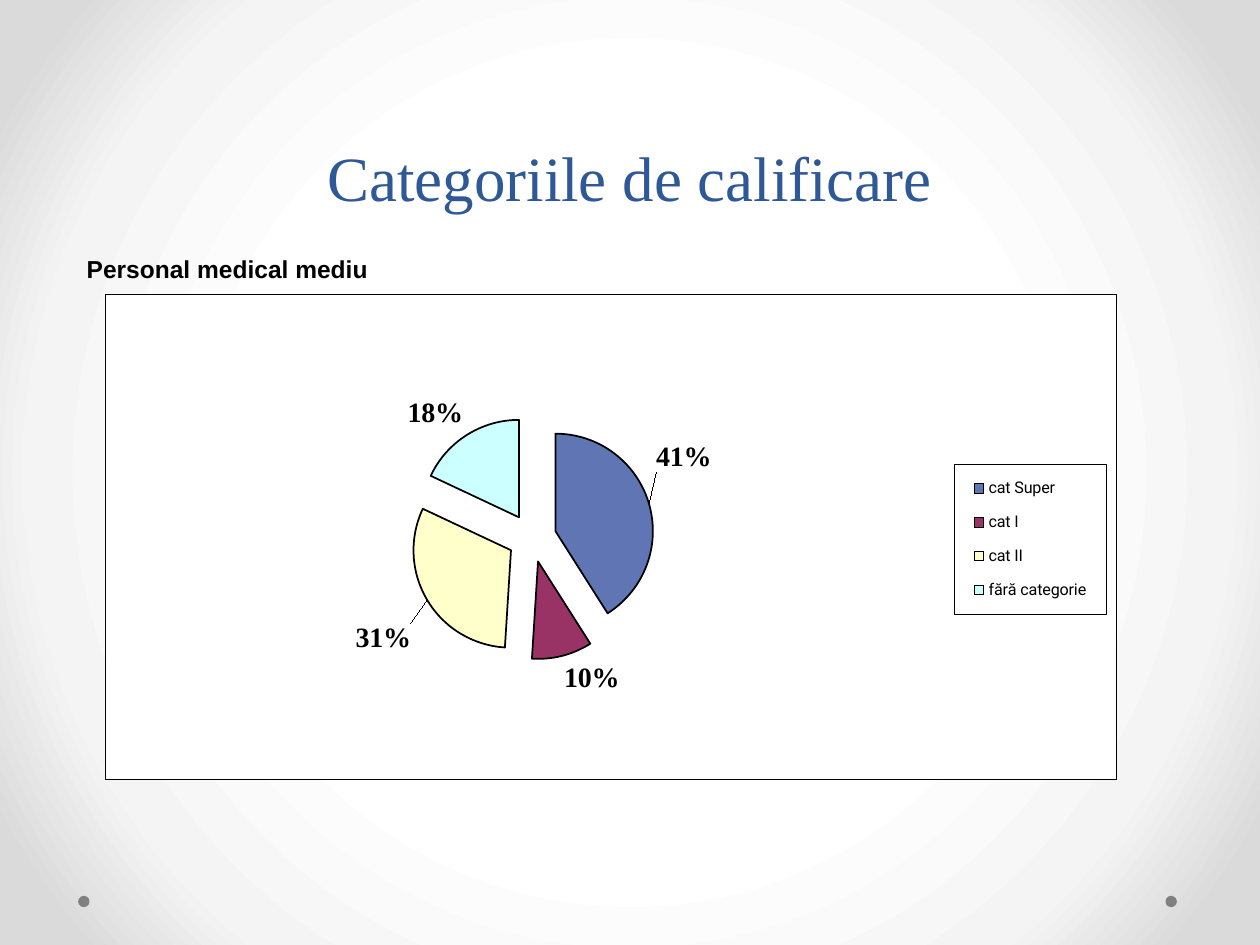
from pptx import Presentation
from pptx.chart.data import CategoryChartData
from pptx.dml.color import RGBColor
from pptx.enum.chart import XL_CHART_TYPE as ChartType
from pptx.enum.chart import XL_LABEL_POSITION as LabelPosition
from pptx.enum.chart import XL_LEGEND_POSITION as LegendPosition
from pptx.enum.shapes import MSO_SHAPE as Shape
from pptx.enum.text import MSO_ANCHOR as Anchor
from pptx.enum.text import PP_ALIGN as Align
from pptx.oxml import parse_xml
from pptx.oxml.ns import nsdecls, qn
from pptx.util import Inches, Pt

TITLE = "Categoriile de calificare"
SUBTITLE = "Personal medical mediu"
SLICES = [
    ("cat Super", 0.41, "6076B4"),
    ("cat I", 0.10, "993366"),
    ("cat II", 0.31, "FFFFCC"),
    ("fără categorie", 0.18, "CCFFFF"),
]
LABEL_SHIFTS = {0: (0, -0.06), 2: (-0.01, 0.04)}
COLORS = {"title": "2F5897", "ink": "000000", "paper": "FFFFFF", "dot": "808080"}
BACKDROP = [(0, "FFFFFF"), (50, "FFFFFF"), (76, "F4F4F4"), (92, "DADADA"), (100, "DADADA")]
DOT_LEFTS = [0.62, 9.25]


def style_font(font, name, size, color, bold=False):
    font.name = name
    font.size = Pt(size)
    font.bold = bold
    font.color.rgb = RGBColor.from_string(color)


def layout_xml(x, y, w=None, h=None, inner=False):
    parts = '<c:layoutTarget val="inner"/>' if inner else ""
    if w is not None:
        parts += '<c:xMode val="edge"/><c:yMode val="edge"/>'
    for key, value in zip("xywh", (x, y, w, h)):
        if value is not None:
            parts += f'<c:{key} val="{value}"/>'
    return parse_xml(
        f'<c:layout {nsdecls("c")}><c:manualLayout>{parts}</c:manualLayout></c:layout>'
    )


def framed_xml():
    return parse_xml(
        f'<c:spPr {nsdecls("c", "a")}>'
        f'<a:solidFill><a:srgbClr val="{COLORS["paper"]}"/></a:solidFill>'
        f'<a:ln w="{Pt(0.25)}"><a:solidFill><a:srgbClr val="{COLORS["ink"]}"/>'
        "</a:solidFill></a:ln></c:spPr>"
    )


def add_backdrop(page):
    stops = "".join(
        f'<a:gs pos="{pos * 1000}"><a:srgbClr val="{color}"/></a:gs>' for pos, color in BACKDROP
    )
    page.element.find(qn("p:cSld")).insert(0, parse_xml(
        f'<p:bg {nsdecls("p", "a")}><p:bgPr><a:gradFill><a:gsLst>{stops}</a:gsLst>'
        '<a:path path="circle"><a:fillToRect l="50000" t="50000" r="50000" b="50000"/>'
        "</a:path></a:gradFill><a:effectLst/></p:bgPr></p:bg>"
    ))


def add_dots(page):
    for left in DOT_LEFTS:
        dot = page.shapes.add_shape(
            Shape.OVAL, Inches(left), Inches(7.11), Inches(0.09), Inches(0.09)
        )
        dot.shadow.inherit = False
        dot.fill.solid()
        dot.fill.fore_color.rgb = RGBColor.from_string(COLORS["dot"])
        dot.line.fill.background()


def add_headings(page):
    title = page.shapes.title
    title.left, title.top, title.width, title.height = map(Inches, (0.5, 0, 9, 1.75))
    frame = title.text_frame
    frame.text = TITLE
    frame.vertical_anchor = Anchor.BOTTOM
    para = frame.paragraphs[0]
    para.alignment = Align.CENTER
    para.line_spacing = Pt(58)
    style_font(para.runs[0].font, "Times New Roman", 36, COLORS["title"])

    box = page.shapes.add_textbox(Inches(0.59), Inches(1.95), Inches(2.44), Inches(0.36))
    box.text_frame.text = SUBTITLE
    box.text_frame.vertical_anchor = Anchor.MIDDLE
    span = box.text_frame.paragraphs[0].runs[0]
    style_font(span.font, "Arial", 14, COLORS["ink"], True)


def add_pie(page):
    data = CategoryChartData(number_format="0%")
    data.categories = [name for name, _, _ in SLICES]
    data.add_series("Series 1", [value for _, value, _ in SLICES])
    chart = page.shapes.add_chart(
        ChartType.PIE, Inches(0.83), Inches(2.33), Inches(8.03), Inches(3.86), data
    ).chart
    chart.has_title = False
    style_font(chart.font, "Roboto", 10, COLORS["ink"])
    body = chart.element.find(qn("c:chart"))
    body.addnext(framed_xml())

    area = body.find(qn("c:plotArea"))
    for old in area.findall(qn("c:layout")):
        area.remove(old)
    area.insert(0, layout_xml(0.302, 0.21, 0.241, 0.585, inner=True))

    chart.has_legend = True
    legend = chart.legend
    legend.position = LegendPosition.RIGHT
    legend.include_in_layout = False
    style_font(legend.font, "Roboto", 9.2, COLORS["ink"])
    legend_xml = body.find(qn("c:legend"))
    for old in legend_xml.findall(qn("c:layout")):
        legend_xml.remove(old)
    legend_xml.find(qn("c:legendPos")).addnext(layout_xml(0.84, 0.35, 0.15, 0.31))
    legend_xml.find(qn("c:overlay")).addnext(framed_xml())

    plot = chart.plots[0]
    plot.vary_by_categories = True
    series = plot.series[0]
    series.format.line.color.rgb = RGBColor.from_string(COLORS["ink"])
    series.format.line.width = Pt(1)
    series_xml = area.find(".//" + qn("c:ser"))
    series_xml.find(qn("c:spPr")).addnext(
        parse_xml(f'<c:explosion {nsdecls("c")} val="25"/>')
    )

    labels = series.data_labels
    labels.show_value = True
    labels.number_format = "0%"
    labels.number_format_is_linked = False
    labels.position = LabelPosition.OUTSIDE_END
    style_font(labels.font, "Times New Roman", 16, COLORS["ink"], True)

    for index, (_, _, color) in enumerate(SLICES):
        point = series.points[index]
        point.format.fill.solid()
        point.format.fill.fore_color.rgb = RGBColor.from_string(color)
        point.format.line.color.rgb = RGBColor.from_string(COLORS["ink"])
        point.format.line.width = Pt(1)
        if index in LABEL_SHIFTS:
            label = point.data_label
            style_font(label.font, "Times New Roman", 16, COLORS["ink"], True)
            label.position = LabelPosition.OUTSIDE_END
            label_xml = series_xml.findall(".//" + qn("c:dLbl"))[-1]
            label_xml.find(qn("c:idx")).addnext(layout_xml(*LABEL_SHIFTS[index]))


def main():
    deck = Presentation()
    deck.slide_width, deck.slide_height = Inches(10), Inches(7.5)
    page = deck.slides.add_slide(deck.slide_layouts[5])
    add_backdrop(page)
    add_dots(page)
    add_headings(page)
    add_pie(page)
    deck.save("out.pptx")


if __name__ == "__main__":
    main()
